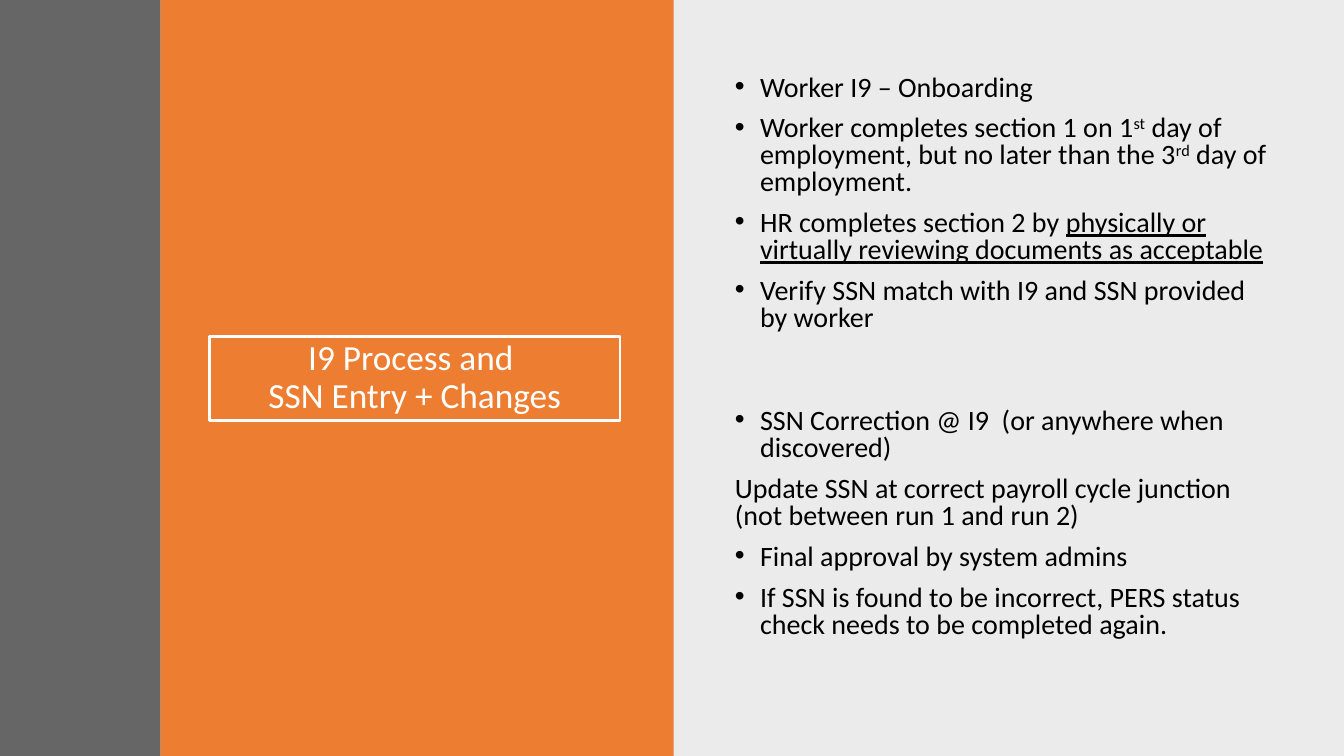
"""Build the slide on the I9 process and SSN entry and changes."""
import pptx
import pptx.dml.color
import pptx.enum.shapes
import pptx.enum.text
import pptx.oxml.ns
import pptx.oxml.xmlchemy
import pptx.util

EMU_PER_PX = 9144
SLIDE_WIDTH, SLIDE_HEIGHT = 1333, 750
BLACK = pptx.dml.color.RGBColor(0x00, 0x00, 0x00)
WHITE = pptx.dml.color.RGBColor(0xFF, 0xFF, 0xFF)
ORANGE = pptx.dml.color.RGBColor(0xED, 0x7D, 0x31)
DARK_GREY = pptx.dml.color.RGBColor(0x40, 0x40, 0x40)

TITLE_FONT = {"name": "Calibri", "size": pptx.util.Pt(25.2)}
BODY_FONT = {"name": "Calibri", "size": pptx.util.Pt(20)}
TITLE_PARAGRAPH = {"alignment": pptx.enum.text.PP_ALIGN.CENTER, "line_spacing": 0.9}
BODY_PARAGRAPH = {"line_spacing": 0.8, "space_before": pptx.util.Pt(10)}
FRAME = {"word_wrap": True, "auto_size": pptx.enum.text.MSO_AUTO_SIZE.NONE}
TITLE_FRAME = {**FRAME, "vertical_anchor": pptx.enum.text.MSO_ANCHOR.MIDDLE}
BODY_FRAME = {**FRAME, "vertical_anchor": pptx.enum.text.MSO_ANCHOR.TOP}

PLAIN, SUPERSCRIPT, UNDERLINED = "plain", "superscript", "underlined"
TITLE_LINES = ["I9 Process and ", "SSN Entry + Changes"]
ONBOARDING = [
    (True, [("Worker I9 – Onboarding", PLAIN)]),
    (True, [
        ("Worker completes section 1 on 1", PLAIN),
        ("st", SUPERSCRIPT),
        (" day of employment, but no later than the 3", PLAIN),
        ("rd", SUPERSCRIPT),
        (" day of employment.", PLAIN),
    ]),
    (True, [
        ("HR completes section 2 by ", PLAIN),
        ("physically or virtually reviewing documents as acceptable", UNDERLINED),
    ]),
    (True, [("Verify SSN match with I9 and SSN provided by worker", PLAIN)]),
]
CORRECTION = [
    (True, [("SSN Correction @ I9  (or anywhere when discovered)", PLAIN)]),
    (False, [("Update SSN at correct payroll cycle junction (not between run 1 and run 2)", PLAIN)]),
    (True, [("Final approval by system admins", PLAIN)]),
    (True, [("If SSN is found to be incorrect, PERS status check needs to be completed again.", PLAIN)]),
]


def px(length):
    """Turn a length in px into EMU."""
    return pptx.util.Emu(length * EMU_PER_PX)


def apply_format(target, values):
    """Set each attribute named in values on target."""
    for name, value in values.items():
        setattr(target, name, value)


def append_element(parent, tag, name, value):
    """Append an XML element with one attribute to its parent."""
    element = pptx.oxml.xmlchemy.OxmlElement(tag)
    element.set(name, value)
    parent.append(element)


def add_run(paragraph, text, font, color, style=PLAIN):
    """Append a formatted run to a paragraph."""
    run = paragraph.add_run()
    run.text = text
    apply_format(run.font, font)
    run.font.color.rgb = color
    if style == UNDERLINED:
        run.font.underline = True
    elif style == SUPERSCRIPT:
        run._r.get_or_add_rPr().set("baseline", "30000")


def add_panel(slide, left, width, color, opacity=100):
    """Add a full-height colour panel with the given opacity in percent."""
    panel = slide.shapes.add_shape(
        pptx.enum.shapes.MSO_SHAPE.RECTANGLE, px(left), 0, px(width), px(SLIDE_HEIGHT))
    panel.shadow.inherit = False
    panel.fill.solid()
    panel.fill.fore_color.rgb = color
    panel.line.fill.background()
    if opacity < 100:
        color_element = panel._element.spPr.find(".//" + pptx.oxml.ns.qn("a:srgbClr"))
        append_element(color_element, "a:alpha", "val", str(opacity * 1000))
    return panel


def place_title(slide, panel):
    """Format the framed title and put it in front of its panel."""
    title = slide.shapes.title
    apply_format(title, {"left": px(208), "top": px(334), "width": px(407), "height": px(83)})
    title.line.color.rgb = WHITE
    title.line.width = pptx.util.Pt(2)
    apply_format(title.text_frame, TITLE_FRAME)
    paragraph = title.text_frame.paragraphs[0]
    apply_format(paragraph, TITLE_PARAGRAPH)
    for index, line in enumerate(TITLE_LINES):
        if index:
            paragraph.add_line_break()
        add_run(paragraph, line, TITLE_FONT, WHITE)
    panel._element.addnext(title._element)


def add_bullet(paragraph):
    """Give a paragraph a hanging round bullet."""
    properties = paragraph._p.get_or_add_pPr()
    properties.set("marL", str(px(25)))
    properties.set("indent", str(px(-25)))
    append_element(properties, "a:buFont", "typeface", "Arial")
    append_element(properties, "a:buChar", "char", "•")


def add_body(slide, top, items):
    """Add a text box of bulleted and plain paragraphs."""
    box = slide.shapes.add_textbox(px(719), px(top), px(553), px(279))
    apply_format(box.text_frame, BODY_FRAME)
    for index, (bulleted, runs) in enumerate(items):
        paragraph = box.text_frame.add_paragraph() if index else box.text_frame.paragraphs[0]
        apply_format(paragraph, BODY_PARAGRAPH)
        if bulleted:
            add_bullet(paragraph)
        for text, style in runs:
            add_run(paragraph, text, BODY_FONT, BLACK, style)


def main():
    """Build and save the slide."""
    presentation = pptx.Presentation()
    presentation.slide_width = px(SLIDE_WIDTH)
    presentation.slide_height = px(SLIDE_HEIGHT)
    slide = presentation.slides.add_slide(presentation.slide_layouts[5])
    add_panel(slide, 667, SLIDE_WIDTH - 667, BLACK, 8)
    title_panel = add_panel(slide, 159, 509, ORANGE)
    place_title(slide, title_panel)
    add_panel(slide, 0, 159, DARK_GREY, 80)
    add_body(slide, 70, ONBOARDING)
    add_body(slide, 401, CORRECTION)
    presentation.save("out.pptx")


if __name__ == "__main__":
    main()
